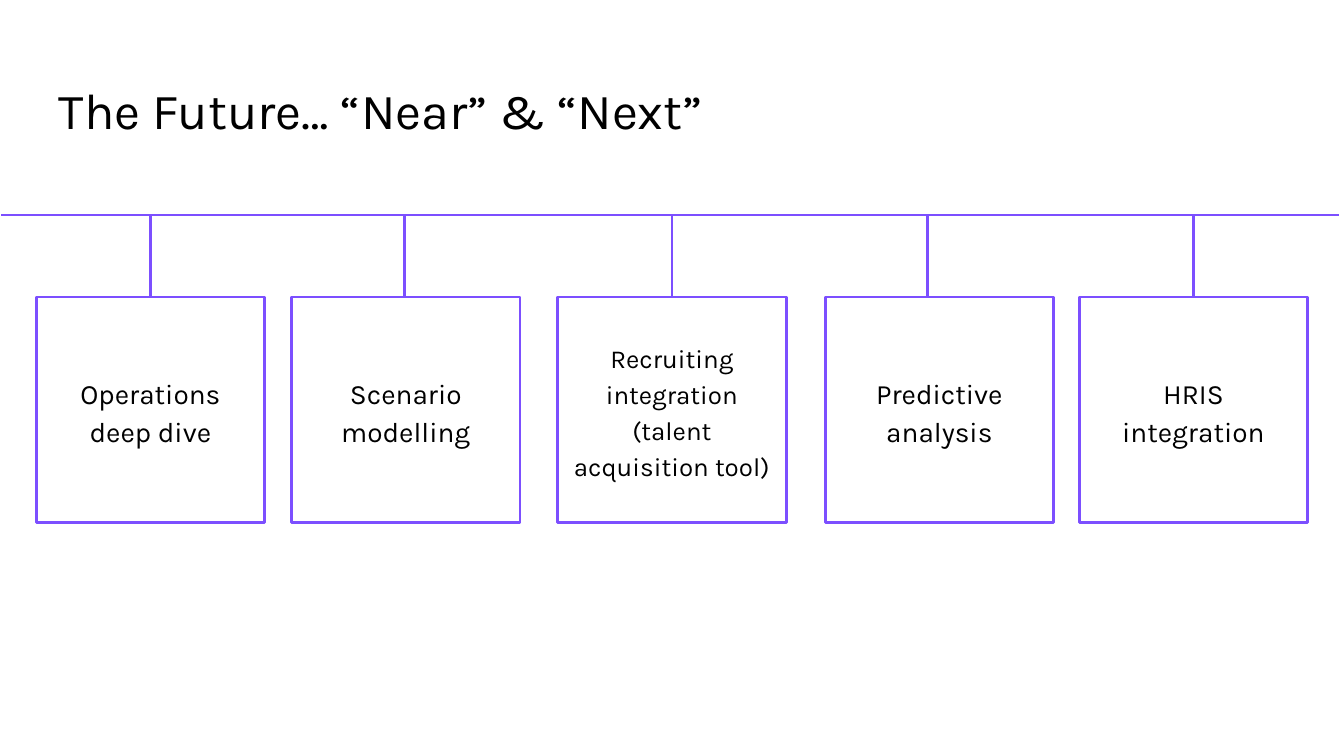
from lxml import etree
from pptx import Presentation
from pptx.dml.color import RGBColor
from pptx.enum.shapes import MSO_CONNECTOR, MSO_SHAPE
from pptx.enum.text import MSO_ANCHOR as ANCHOR, PP_ALIGN as ALIGN
from pptx.oxml.ns import qn
from pptx.util import Inches, Pt

COLORS = {"accent": "7C4FFF", "text": "000000", "background": "FFFFFF"}
FONT = "Karla"
SLIDE_W = 10
SLIDE_H = SLIDE_W * 9 / 16
TIMELINE_Y = 1.6
CARD_TOP, CARD_W, CARD_H = 2.21, 1.7, 1.68
CARDS = [
    (0.27, 1.12, "Operations deep dive", 15),
    (2.17, 3.01, "Scenario modelling", 15),
    (4.15, 5, "Recruiting integration (talent acquisition tool)", 13.9),
    (6.14, 6.9, "Predictive analysis", 15),
    (8.03, 8.88, "HRIS integration", 15),
]


def rgb(name):
    """Return the named colour."""
    return RGBColor.from_string(COLORS[name])


def set_line(sp):
    """Give a shape or connector the accent line."""
    sp.line.color.rgb = rgb("accent")
    sp.line.width = Pt(1.5)


def write(sp, text, size, frame_format, para_format):
    """Write one formatted paragraph into a shape."""
    tf = sp.text_frame
    margins = {f"margin_{side}": Inches(0.1) for side in ("left", "top", "right", "bottom")}
    for name, value in {"word_wrap": True, **margins, **frame_format}.items():
        setattr(tf, name, value)
    p = tf.paragraphs[0]
    for name, value in para_format.items():
        setattr(p, name, value)
    r = p.add_run()
    r.text = text
    for name, value in {"name": FONT, "size": Pt(size)}.items():
        setattr(r.font, name, value)
    r.font.color.rgb = rgb("text")


def add_title(s, x, y, w, h, text):
    """Place the slide title."""
    sp = s.shapes.add_textbox(*map(Inches, (x, y, w, h)))
    write(sp, text, 27, {"vertical_anchor": ANCHOR.TOP}, {"alignment": ALIGN.LEFT})


def add_line(s, x1, y1, x2, y2):
    """Draw a straight accent line without a shadow."""
    line = s.shapes.add_connector(MSO_CONNECTOR.STRAIGHT, *map(Inches, (x1, y1, x2, y2)))
    set_line(line)
    etree.SubElement(line._element.spPr, qn("a:effectLst"))


def add_card(s, x, y, w, h, text, size):
    """Place an outlined card with centred text."""
    sp = s.shapes.add_shape(MSO_SHAPE.RECTANGLE, *map(Inches, (x, y, w, h)))
    sp.shadow.inherit = False
    sp.fill.background()
    set_line(sp)
    write(sp, text, size, {"vertical_anchor": ANCHOR.MIDDLE},
          {"alignment": ALIGN.CENTER, "line_spacing": 1.15, "space_after": Pt(12)})


def add_timeline(s, x, y, w):
    """Place the timeline with its hanging cards and their stems."""
    add_line(s, x, y, x + w, y)
    for left, stem, text, size in CARDS:
        add_card(s, left, CARD_TOP, CARD_W, CARD_H, text, size)
        add_line(s, stem, CARD_TOP, stem, y + 0.01)


def main():
    """Build and save the slide."""
    prs = Presentation()
    prs.slide_width, prs.slide_height = Inches(SLIDE_W), Inches(SLIDE_H)
    s = prs.slides.add_slide(prs.slide_layouts[6])
    s.background.fill.solid()
    s.background.fill.fore_color.rgb = rgb("background")
    add_title(s, 0.34, 0.49, 9.32, 0.63, "The Future… “Near” & “Next”")
    add_timeline(s, 0.01, TIMELINE_Y, 9.95)
    prs.save("out.pptx")


if __name__ == "__main__":
    main()
